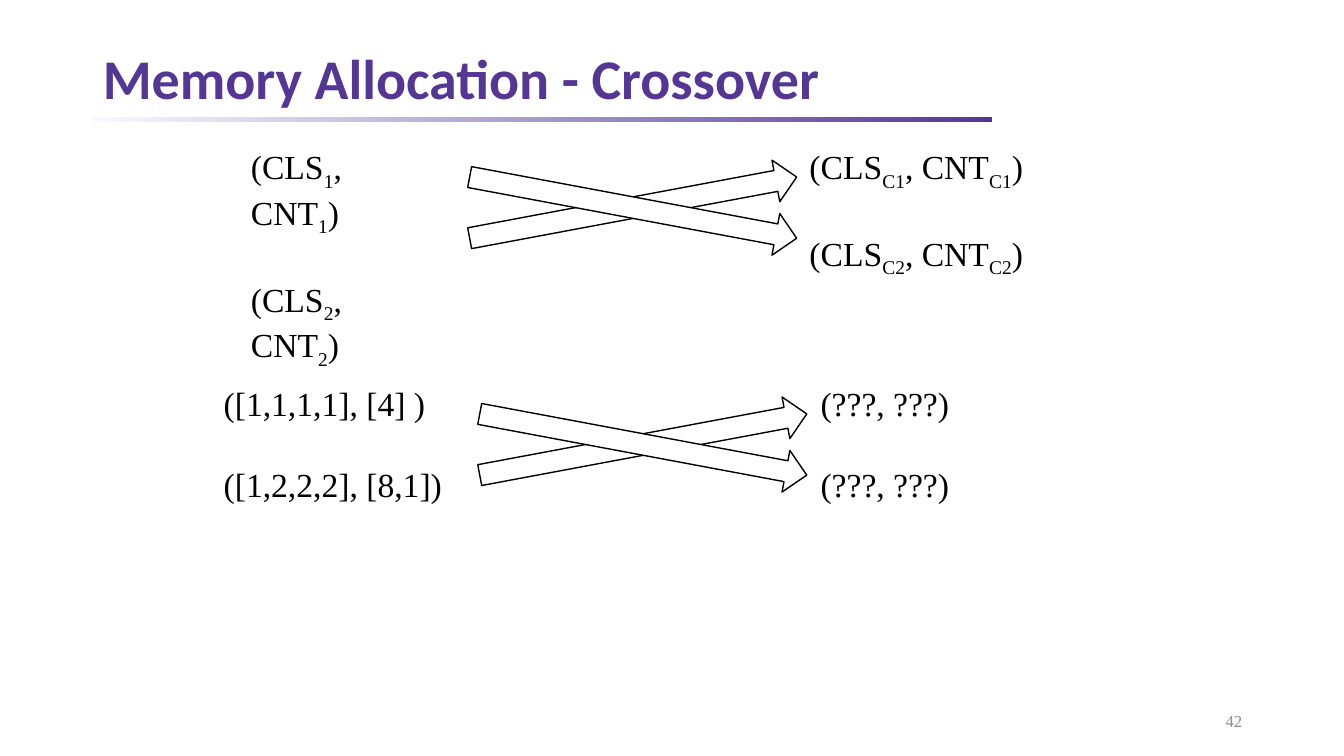
"""Build the memory allocation crossover slide."""
from dataclasses import dataclass

from pptx import Presentation
from pptx.dml.color import RGBColor
from pptx.enum.shapes import MSO_SHAPE
from pptx.enum.text import MSO_ANCHOR, PP_ALIGN
from pptx.util import Inches, Pt


@dataclass(frozen=True)
class Theme:
    purple: RGBColor = RGBColor(0x54, 0x37, 0x95)
    pale: RGBColor = RGBColor(0xF7, 0xFA, 0xFD)
    black: RGBColor = RGBColor(0, 0, 0)
    white: RGBColor = RGBColor(255, 255, 255)
    gray: RGBColor = RGBColor(0x8C, 0x8C, 0x8C)
    heading: str = "Calibri"
    body: str = "Times New Roman"
    title_size: Pt = Pt(40)
    body_size: Pt = Pt(24)
    number_size: Pt = Pt(12)
    pair_gap: Pt = Pt(29)


theme = Theme()


def style(paragraph, name, size, color):
    paragraph.font.name = name
    paragraph.font.size = size
    paragraph.font.color.rgb = color


def add_text_box(left, top, width, height):
    box = slide.shapes.add_textbox(Inches(left), Inches(top), Inches(width), Inches(height))
    box.text_frame.word_wrap = True
    return box.text_frame


presentation = Presentation()
presentation.slide_width = Inches(13.33)
presentation.slide_height = Inches(7.5)
slide = presentation.slides.add_slide(presentation.slide_layouts[5])

rule = slide.shapes.add_shape(
    MSO_SHAPE.RECTANGLE, Inches(0.92), Inches(1.16), Inches(8.92), Inches(0.05))
rule.shadow.inherit = False
rule.line.fill.background()
rule.fill.gradient()
rule.fill.gradient_angle = 0
for stop, color in zip(rule.fill.gradient_stops, (theme.pale, theme.purple)):
    stop.color.rgb = color
rule.fill.gradient_stops[0].position = 0
rule.fill.gradient_stops[1].position = 1

title = slide.shapes.title
title.left, title.top = Inches(0.92), Inches(0.43)
title.width, title.height = Inches(11.5), Inches(0.75)
title.text_frame.text = "Memory Allocation - Crossover"
title.text_frame.vertical_anchor = MSO_ANCHOR.MIDDLE
heading = title.text_frame.paragraphs[0]
heading.alignment = PP_ALIGN.LEFT
heading.line_spacing = 0.9
style(heading, theme.heading, theme.title_size, theme.purple)
heading.font.bold = True

number_frame = add_text_box(9.42, 6.95, 3, 0.4)
number_frame.text = "42"
number_frame.vertical_anchor = MSO_ANCHOR.MIDDLE
number = number_frame.paragraphs[0]
number.alignment = PP_ALIGN.RIGHT
style(number, theme.body, theme.number_size, theme.gray)

# Within each line, every second piece is a subscript.
pairs = [
    (2.39, 1.4, 1.99, [["(CLS", "1", ", CNT", "1", ")"], ["(CLS", "2", ", CNT", "2", ")"]]),
    (7.93, 1.4, 2.75, [["(CLS", "C1", ", CNT", "C1", ")"], ["(CLS", "C2", ", CNT", "C2", ")"]]),
    (2.12, 3.75, 2.37, [["([1,1,1,1], [4] )"], ["([1,2,2,2], [8,1])"]]),
    (8.04, 3.75, 2.75, [["(???, ???)"], ["(???, ???)"]]),
]
for left, top, width, lines in pairs:
    frame = add_text_box(left, top, width, 1.31)
    second = frame.add_paragraph()
    second.space_before = theme.pair_gap
    for paragraph, pieces in zip(frame.paragraphs, lines):
        style(paragraph, theme.body, theme.body_size, theme.black)
        for index, piece in enumerate(pieces):
            run = paragraph.add_run()
            run.text = piece
            if index % 2:
                run._r.get_or_add_rPr().set("baseline", "-25000")

for left, top in [(4.63, 1.85), (4.73, 4.2)]:
    for rotation in (-10.6, 10.6):
        arrow = slide.shapes.add_shape(
            MSO_SHAPE.RIGHT_ARROW, Inches(left), Inches(top), Inches(3.3), Inches(0.42))
        arrow.rotation = rotation
        arrow.shadow.inherit = False
        arrow.fill.solid()
        arrow.fill.fore_color.rgb = theme.white
        arrow.line.color.rgb = theme.black
        arrow.line.width = Pt(1)

presentation.save("out.pptx")
